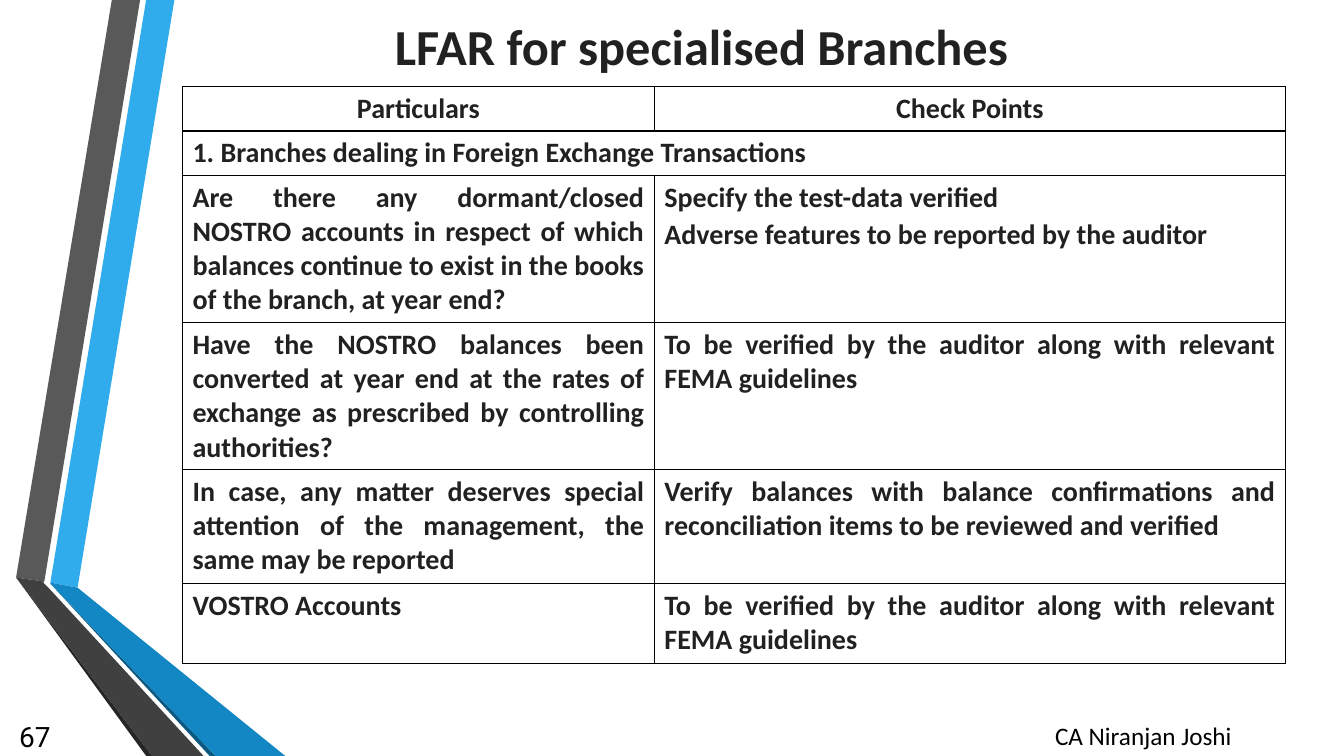
from dataclasses import dataclass

from lxml import etree
from pptx import Presentation
from pptx.dml.color import RGBColor
from pptx.enum.text import MSO_ANCHOR, PP_ALIGN
from pptx.oxml.ns import qn
from pptx.util import Pt

EMU_PER_PX = 9144
CENTER, JUSTIFY, RIGHT = PP_ALIGN.CENTER, PP_ALIGN.JUSTIFY, PP_ALIGN.RIGHT
TOP, MIDDLE = MSO_ANCHOR.TOP, MSO_ANCHOR.MIDDLE


@dataclass(frozen=True)
class Theme:
    font: str = "Calibri"
    number_font: str = "Roboto"
    ink: str = "212121"
    black: str = "000000"
    blue: str = "30ACEC"
    blue_fold: str = "1287C3"
    blue_edge: str = "0C5A82"
    gray: str = "595959"
    gray_fold: str = "404040"
    gray_edge: str = "262626"
    title_size: int = 36
    body_size: int = 20
    footer_size: int = 18
    border_width: int = 1


THEME = Theme()

RIBBONS = [
    (THEME.blue, [(50, 578), (77, 583), (173, 0), (145, 0)]),
    (THEME.gray, [(139, 0), (111, 0), (16, 573), (44, 577)]),
    (THEME.gray_edge, [(16, 573), (145, 750), (151, 750)]),
    (THEME.blue_edge, [(50, 579), (208, 750), (214, 750)]),
    (THEME.blue_fold, [(50, 579), (214, 750), (283, 750), (77, 583), (50, 578)]),
    (THEME.gray_fold, [(202, 750), (48, 583), (43, 578), (44, 577), (16, 573), (151, 750)]),
]

COLUMN_WIDTHS = [468, 626]
ROW_HEIGHTS = [44, 44, 146, 146, 113, 79]
FEMA_CHECK = "To be verified by the auditor along with relevant FEMA guidelines"
# Each cell is a list of paragraphs; a row with one cell spans the table.
ROWS = [
    [["Particulars"], ["Check Points"]],
    [["1. Branches dealing in Foreign Exchange Transactions"]],
    [["Are there any dormant/closed NOSTRO accounts in respect of which balances "
      "continue to exist in the books of the branch, at year end?"],
     ["Specify the test-data verified", "Adverse features to be reported by the auditor"]],
    [["Have the NOSTRO balances been converted at year end at the rates of exchange "
      "as prescribed by controlling authorities?"],
     [FEMA_CHECK]],
    [["In case, any matter deserves special attention of the management, "
      "the same may be reported"],
     ["Verify balances with balance confirmations and reconciliation items "
      "to be reviewed and verified"]],
    [["VOSTRO Accounts"], [FEMA_CHECK]],
]


def px(length):
    return length * EMU_PER_PX


def write_paragraph(paragraph, text, size, color, alignment, bold=False, font=THEME.font):
    paragraph.alignment = alignment
    run = paragraph.add_run()
    run.text = text
    run.font.name = font
    run.font.size = Pt(size)
    run.font.bold = bold
    run.font.color.rgb = RGBColor.from_string(color)


def add_text(slide, box, text, size, color, alignment, anchor=TOP, **style):
    frame = slide.shapes.add_textbox(*map(px, box)).text_frame
    frame.word_wrap = True
    frame.vertical_anchor = anchor
    write_paragraph(frame.paragraphs[0], text, size, color, alignment, **style)


def add_ribbon(slide, color, points):
    builder = slide.shapes.build_freeform(*points[0], scale=EMU_PER_PX)
    builder.add_line_segments(points[1:], close=True)
    shape = builder.convert_to_shape()
    shape.shadow.inherit = False
    shape.fill.solid()
    shape.fill.fore_color.rgb = RGBColor.from_string(color)
    shape.line.fill.background()


def add_borders(cell):
    properties = cell._tc.get_or_add_tcPr()
    for index, side in enumerate(("a:lnL", "a:lnR", "a:lnT", "a:lnB")):
        line = etree.Element(qn(side), w=str(Pt(THEME.border_width)))
        fill = etree.SubElement(line, qn("a:solidFill"))
        etree.SubElement(fill, qn("a:srgbClr"), val=THEME.black)
        properties.insert(index, line)


def fill_cell(cell, texts, alignment):
    frame = cell.text_frame
    for index, text in enumerate(texts):
        paragraph = frame.add_paragraph() if index else frame.paragraphs[0]
        if index:
            paragraph.space_before = Pt(2)
        write_paragraph(paragraph, text, THEME.body_size, THEME.ink, alignment, bold=True)


def add_check_table(slide, left, top):
    box = (left, top, sum(COLUMN_WIDTHS), sum(ROW_HEIGHTS))
    table = slide.shapes.add_table(len(ROWS), len(COLUMN_WIDTHS), *map(px, box)).table
    table.horz_banding = False
    table.first_row = False
    for column, width in zip(table.columns, COLUMN_WIDTHS):
        column.width = px(width)
    for row, height in zip(table.rows, ROW_HEIGHTS):
        row.height = px(height)
    for cell in table.iter_cells():
        cell.fill.background()
        add_borders(cell)
    for row_index, row_texts in enumerate(ROWS):
        if len(row_texts) == 1:
            table.cell(row_index, 0).merge(table.cell(row_index, len(COLUMN_WIDTHS) - 1))
        for column_index, texts in enumerate(row_texts):
            alignment = JUSTIFY if row_index else CENTER
            fill_cell(table.cell(row_index, column_index), texts, alignment)


def main():
    presentation = Presentation()
    presentation.slide_width, presentation.slide_height = px(1333), px(750)
    slide = presentation.slides.add_slide(presentation.slide_layouts[6])
    for color, points in RIBBONS:
        add_ribbon(slide, color, points)
    add_text(slide, (246, 8, 900, 74), "LFAR for specialised Branches",
             THEME.title_size, THEME.ink, CENTER, MIDDLE, bold=True)
    add_check_table(slide, 181, 86)
    add_text(slide, (959, 710, 350, 40), "CA Niranjan Joshi",
             THEME.footer_size, THEME.black, CENTER)
    add_text(slide, (0, 710, 60, 40), "67",
             THEME.body_size, THEME.black, RIGHT, MIDDLE, font=THEME.number_font)
    presentation.save("out.pptx")


if __name__ == "__main__":
    main()
